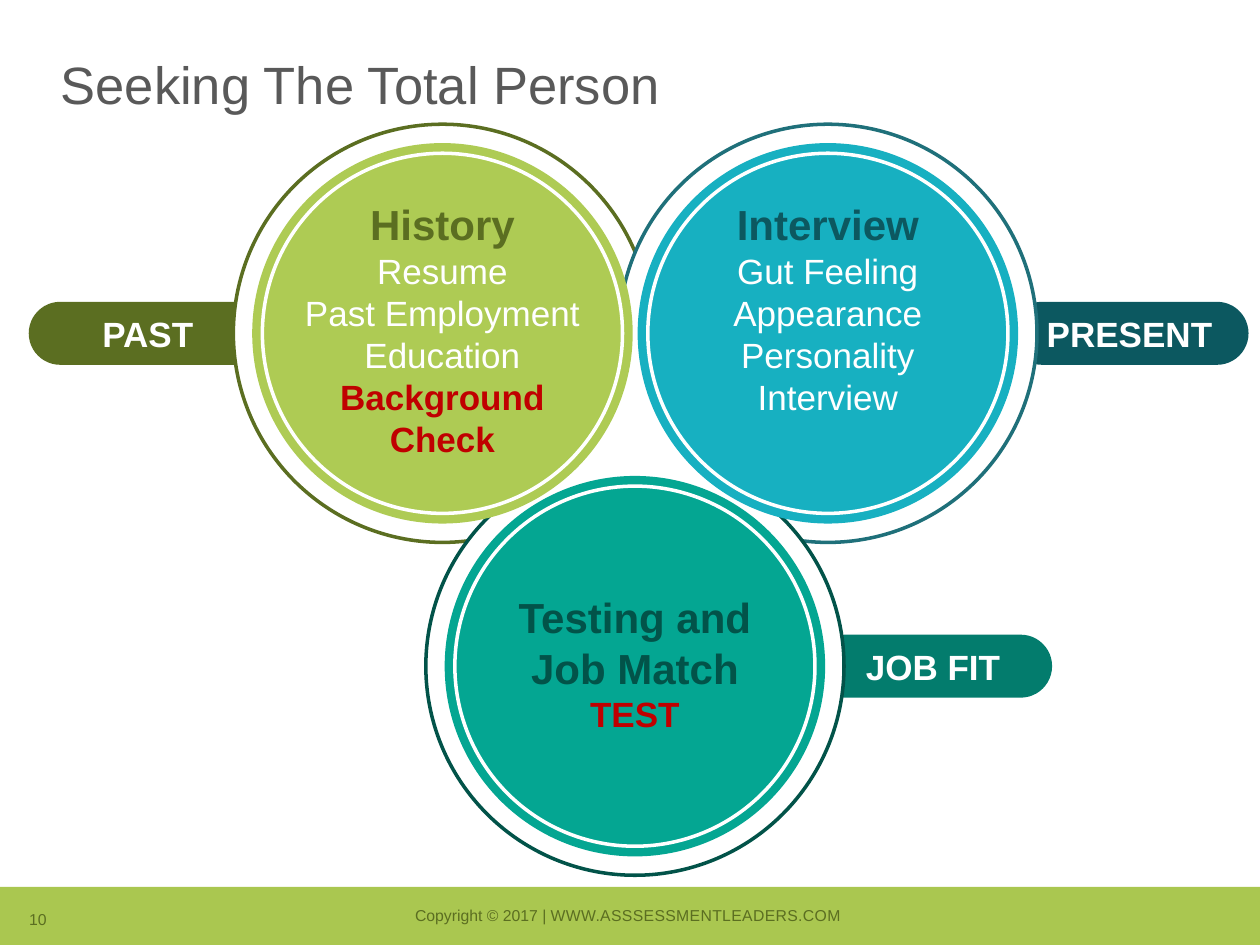
"""Build the "Seeking The Total Person" slide with three linked circles."""
import dataclasses

import pptx
import pptx.dml.color
import pptx.enum.shapes
import pptx.enum.text
import pptx.util

Cm = pptx.util.Cm
Pt = pptx.util.Pt
Shape = pptx.enum.shapes.MSO_SHAPE
Anchor = pptx.enum.text.MSO_ANCHOR
Align = pptx.enum.text.PP_ALIGN


@dataclasses.dataclass(frozen=True)
class Theme:
    font: str = "Arial"
    white: str = "FFFFFF"
    title: str = "595959"
    alert: str = "C00000"
    footer: str = "AAC750"
    olive: str = "5B6E21"
    lime: str = "AECB54"
    petrol: str = "0C5860"
    petrol_ring: str = "1F707A"
    cyan: str = "17B0C1"
    pine: str = "025349"
    jade: str = "04A692"
    jade_dark: str = "037C6D"
    title_size: int = 30
    heading_size: int = 24
    body_size: int = 20
    footer_size: int = 9
    ring_width: int = 2


@dataclasses.dataclass(frozen=True)
class Topic:
    center: tuple
    fill: str
    ring: str
    heading_color: str
    headings: list
    items: list
    alerts: list
    anchor: Anchor
    tag: str
    tag_x: float
    tag_fill: str


class Builder:
    def __init__(self, page, theme):
        self.page = page
        self.theme = theme

    def style(self, para, size, color, bold=False, align=Align.CENTER):
        para.alignment = align
        para.font.name = self.theme.font
        para.font.size = Pt(size)
        para.font.bold = bold
        para.font.color.rgb = pptx.dml.color.RGBColor.from_string(color)

    def shape(self, kind, left, top, width, height, fill=None, line=None):
        shape = self.page.shapes.add_shape(kind, Cm(left), Cm(top), Cm(width), Cm(height))
        shape.shadow.inherit = False
        if fill:
            shape.fill.solid()
            shape.fill.fore_color.rgb = pptx.dml.color.RGBColor.from_string(fill)
        else:
            shape.fill.background()
        if line:
            shape.line.color.rgb = pptx.dml.color.RGBColor.from_string(line)
            shape.line.width = Pt(self.theme.ring_width)
        else:
            shape.line.fill.background()
        return shape

    def circle(self, center, diameter, fill=None, line=None):
        left, top = (value - diameter / 2 for value in center)
        return self.shape(Shape.OVAL, left, top, diameter, diameter, fill, line)

    def title(self, text):
        title = self.page.shapes.title
        title.left, title.top, title.width, title.height = Cm(0.97), Cm(1.07), Cm(23.5), Cm(2.11)
        frame = title.text_frame
        frame.text = text
        frame.vertical_anchor = Anchor.TOP
        para = frame.paragraphs[0]
        para.line_spacing = 0.9
        self.style(para, self.theme.title_size, self.theme.title, align=Align.LEFT)

    def tag(self, topic):
        width, height = 4.8, 1.27
        pill = self.shape(Shape.ROUNDED_RECTANGLE, topic.tag_x - width / 2,
                          topic.center[1] - height / 2, width, height, topic.tag_fill)
        pill.adjustments[0] = 0.5
        frame = pill.text_frame
        frame.text = topic.tag
        frame.word_wrap = False
        frame.vertical_anchor = Anchor.MIDDLE
        self.style(frame.paragraphs[0], self.theme.body_size, self.theme.white, bold=True)

    def disc(self, topic):
        theme = self.theme
        frame = self.circle(topic.center, 7.67, topic.fill).text_frame
        frame.word_wrap = False
        frame.vertical_anchor = topic.anchor
        frame.margin_top = 0
        lines = [(text, theme.heading_size, topic.heading_color, True) for text in topic.headings]
        lines += [(text, theme.body_size, theme.white, False) for text in topic.items]
        lines += [(text, theme.body_size, theme.alert, True) for text in topic.alerts]
        frame.text = "\n".join(text for text, *_ in lines)
        for para, (_, size, color, bold) in zip(frame.paragraphs, lines):
            self.style(para, size, color, bold)

    def footer_text(self, left, top, width, align, text, spaced_text=""):
        box = self.page.shapes.add_textbox(Cm(left), Cm(top), Cm(width), Cm(0.64))
        frame = box.text_frame
        frame.word_wrap = False
        frame.auto_size = pptx.enum.text.MSO_AUTO_SIZE.SHAPE_TO_FIT_TEXT
        frame.vertical_anchor = Anchor.BOTTOM
        para = frame.paragraphs[0]
        para.add_run().text = text
        if spaced_text:
            span = para.add_run()
            span.text = spaced_text
            span.font._element.set("spc", "20")
        self.style(para, self.theme.footer_size, self.theme.olive, align=align)


def main():
    theme = Theme()
    deck = pptx.Presentation()
    deck.slide_width, deck.slide_height = Cm(25.4), Cm(19.05)
    page = deck.slides.add_slide(deck.slide_layouts[5])
    builder = Builder(page, theme)
    topics = [
        Topic((8.92, 6.72), theme.lime, theme.olive, theme.olive, ["History"],
              ["Resume", "Past Employment", "Education"], ["Background", "Check"],
              Anchor.TOP, "PAST", 2.98, theme.olive),
        Topic((16.69, 6.72), theme.cyan, theme.petrol_ring, theme.petrol, ["Interview"],
              ["Gut Feeling", "Appearance", "Personality", "Interview"], [],
              Anchor.TOP, "PRESENT", 22.77, theme.petrol),
        Topic((12.8, 13.43), theme.jade, theme.pine, theme.pine, ["Testing and", "Job Match"],
              [], ["TEST"], Anchor.MIDDLE, "JOB FIT", 18.81, theme.jade_dark),
    ]

    builder.title("Seeking The Total Person")
    builder.shape(Shape.RECTANGLE, 0, 17.88, 25.4, 1.17, theme.footer)
    builder.footer_text(8.02, 18.12, 9.27, Align.CENTER,
                        "Copyright © 2017 | ", "WWW.ASSSESSMENTLEADERS.COM")
    builder.footer_text(0.34, 18.2, 0.91, Align.LEFT, "10")
    for topic in topics:
        builder.tag(topic)
    for topic in topics:
        builder.circle(topic.center, 8.43, theme.white, topic.ring)
    builder.circle((12.69, 8.9), 3.94, theme.white)
    for topic in topics:
        builder.disc(topic)
    for topic in topics:
        builder.circle(topic.center, 7.26, line=theme.white)
    deck.save("out.pptx")


if __name__ == "__main__":
    main()
